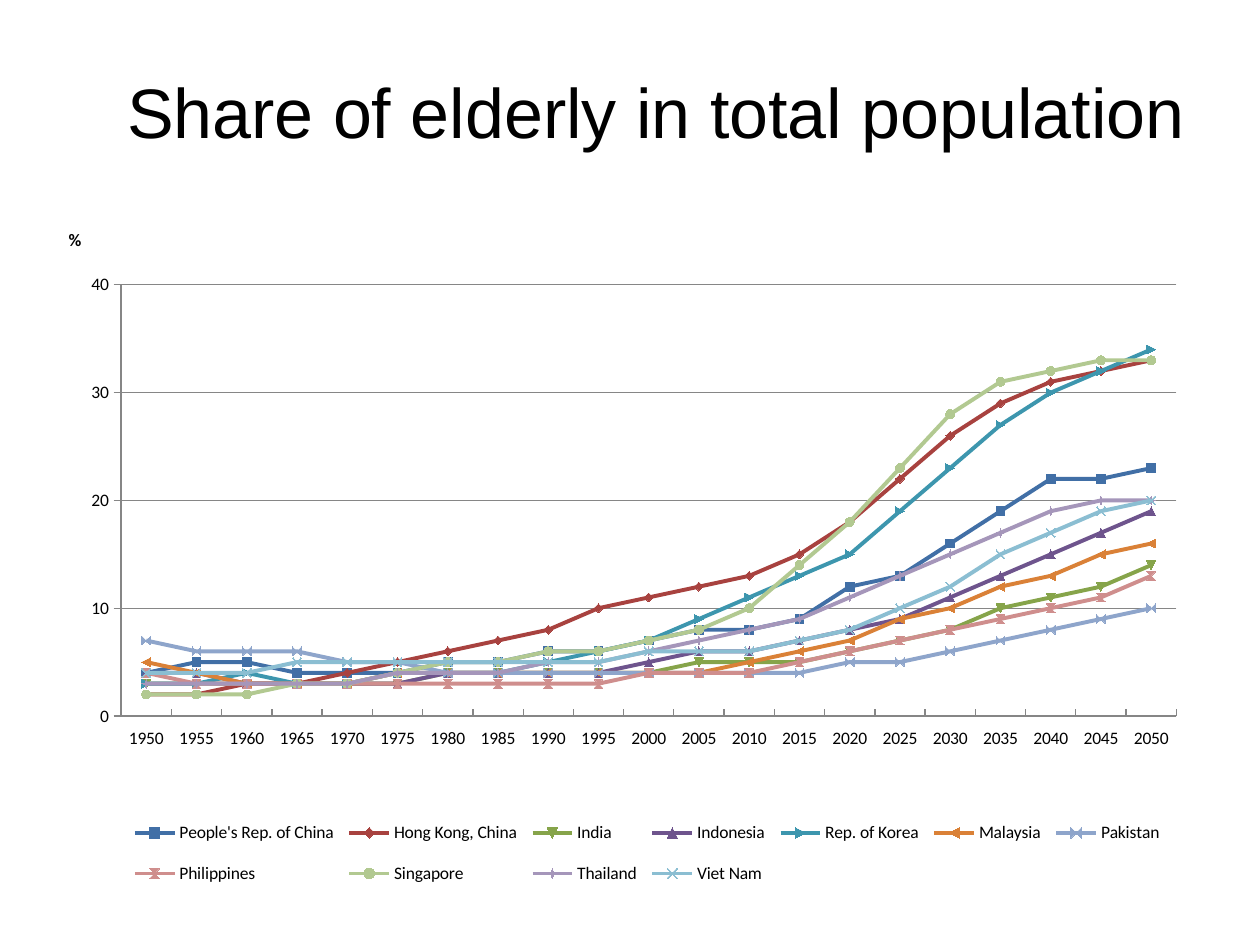
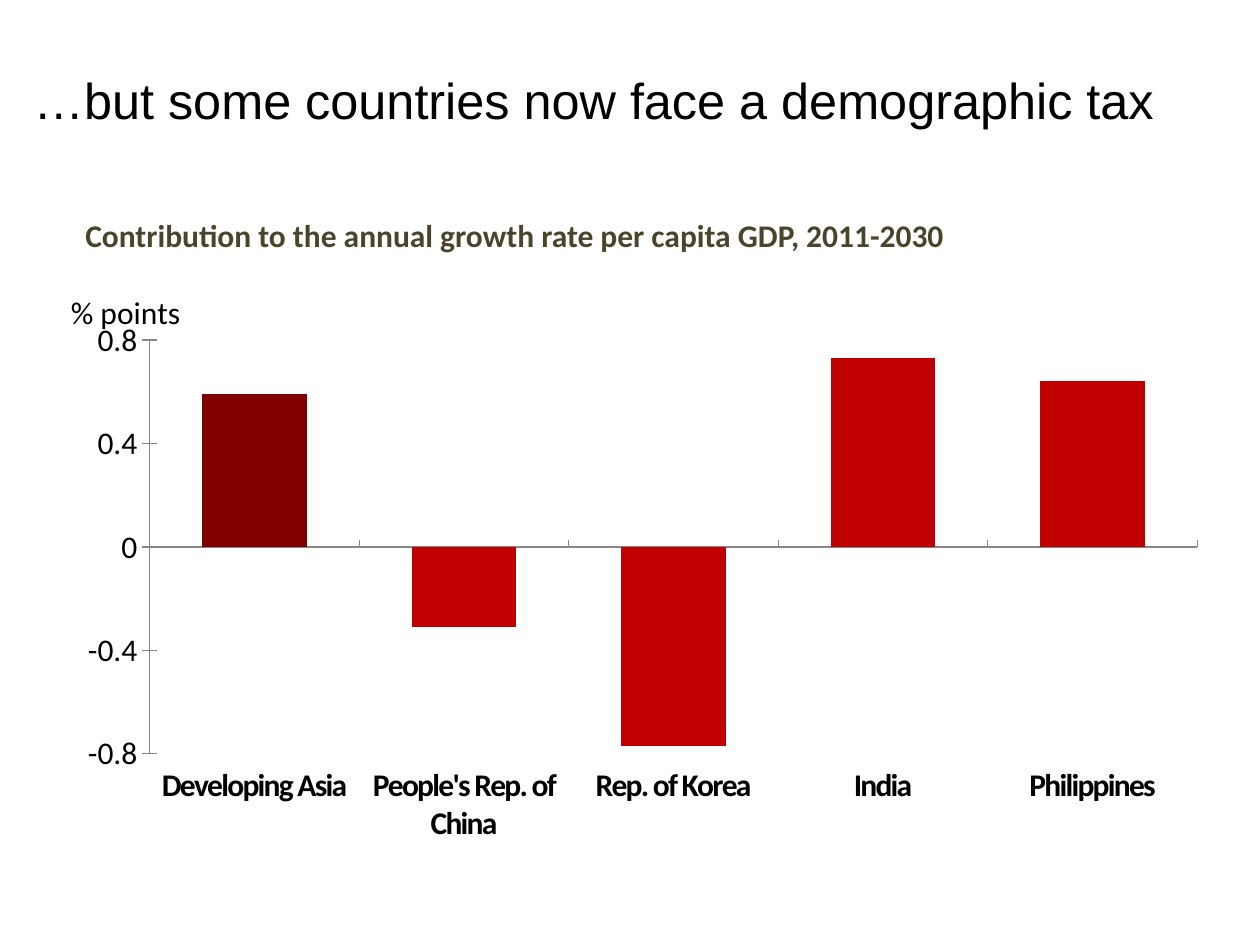
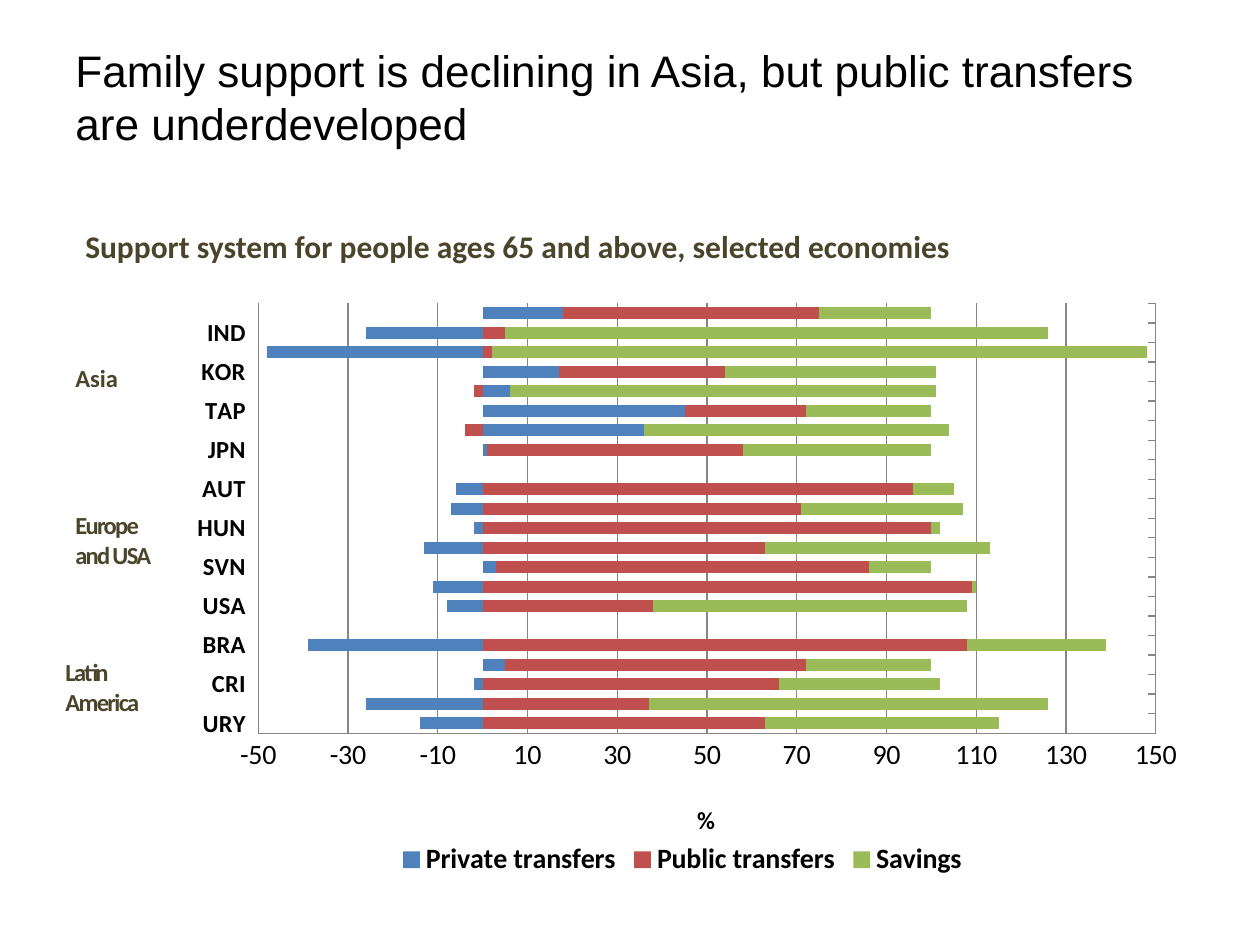
from lxml import etree
from pptx import Presentation
from pptx.chart.data import CategoryChartData
from pptx.dml.color import RGBColor
from pptx.enum.chart import (XL_AXIS_CROSSES, XL_CHART_TYPE, XL_LEGEND_POSITION,
                             XL_TICK_LABEL_POSITION, XL_TICK_MARK)
from pptx.enum.text import MSO_ANCHOR, PP_ALIGN
from pptx.oxml.ns import qn
from pptx.util import Cm, Pt

LINE = XL_CHART_TYPE.LINE_MARKERS
COLUMN = XL_CHART_TYPE.COLUMN_CLUSTERED
STACK = XL_CHART_TYPE.BAR_STACKED
IN, OUT, CROSS = XL_TICK_MARK.INSIDE, XL_TICK_MARK.OUTSIDE, XL_TICK_MARK.CROSS
LOW = XL_TICK_LABEL_POSITION.LOW
BOTTOM = XL_LEGEND_POSITION.BOTTOM
FAR = XL_AXIS_CROSSES.MAXIMUM
MIDDLE, TOP = MSO_ANCHOR.MIDDLE, MSO_ANCHOR.TOP
LEFT, CENTER = PP_ALIGN.LEFT, PP_ALIGN.CENTER

BLACK = RGBColor(0x00, 0x00, 0x00)
OLIVE = RGBColor(0x4A, 0x45, 0x2A)
GRAY = RGBColor(0x86, 0x86, 0x86)
RED = RGBColor(0xC0, 0x00, 0x00)
MAROON = RGBColor(0x80, 0x00, 0x00)
TINTS = [RGBColor.from_string(c) for c in (
    "416FA6", "A8423F", "86A44A", "6E548D", "3D96AE", "DA8137",
    "8EA5CB", "CF8E8D", "B2C991", "A596BA", "8BBED2")]
TRIO = [RGBColor.from_string(c) for c in ("4F81BD", "C0504D", "9BBB59")]


def write(slide, box, text, size, font="Calibri", color=OLIVE, bold=True,
          align=LEFT, anchor=TOP, wrap=True, tight=False):
    frame = slide.shapes.add_textbox(*[Cm(n) for n in box]).text_frame
    frame.word_wrap = wrap
    frame.vertical_anchor = anchor
    para = frame.paragraphs[0]
    para.alignment = align
    run = para.add_run()
    run.text = text
    run.font.name, run.font.size = font, Pt(size)
    run.font.bold, run.font.color.rgb = bold, color
    if tight:
        run._r.get_or_add_rPr().set("spc", "-100")


def place(part, index, spot, inner=False):
    """Fix a chart part at fractions of the chart: x, y and maybe w, h."""
    for old in part.findall(qn("c:layout")):
        part.remove(old)
    layout = etree.Element(qn("c:layout"))
    manual = etree.SubElement(layout, qn("c:manualLayout"))
    rules = [("layoutTarget", "inner")] if inner else []
    rules += [("xMode", "edge"), ("yMode", "edge")] + list(zip("xywh", spot))
    for name, val in rules:
        etree.SubElement(manual, qn("c:" + name)).set("val", str(val))
    part.insert(index, layout)


# Data
YEARS = [str(y) for y in range(1950, 2051, 5)]
ELDERLY = {
    "People's Rep. of China":
        [4, 5, 5, 4, 4, 4, 5, 5, 6, 6, 7, 8, 8, 9, 12, 13, 16, 19, 22, 22, 23],
    "Hong Kong, China":
        [2, 2, 3, 3, 4, 5, 6, 7, 8, 10, 11, 12, 13, 15, 18, 22, 26, 29, 31, 32, 33],
    "India": [3, 3, 3, 3, 3, 3, 4, 4, 4, 4, 4, 5, 5, 5, 6, 7, 8, 10, 11, 12, 14],
    "Indonesia": [4, 4, 3, 3, 3, 3, 4, 4, 4, 4, 5, 6, 6, 7, 8, 9, 11, 13, 15, 17, 19],
    "Rep. of Korea":
        [3, 3, 4, 3, 3, 4, 4, 4, 5, 6, 7, 9, 11, 13, 15, 19, 23, 27, 30, 32, 34],
    "Malaysia": [5, 4, 3, 3, 3, 4, 4, 4, 4, 4, 4, 4, 5, 6, 7, 9, 10, 12, 13, 15, 16],
    "Pakistan": [7, 6, 6, 6, 5, 5, 4, 4, 4, 4, 4, 4, 4, 4, 5, 5, 6, 7, 8, 9, 10],
    "Philippines": [4, 3, 3, 3, 3, 3, 3, 3, 3, 3, 4, 4, 4, 5, 6, 7, 8, 9, 10, 11, 13],
    "Singapore":
        [2, 2, 2, 3, 3, 4, 5, 5, 6, 6, 7, 8, 10, 14, 18, 23, 28, 31, 32, 33, 33],
    "Thailand": [3, 3, 3, 3, 3, 4, 4, 4, 5, 5, 6, 7, 8, 9, 11, 13, 15, 17, 19, 20, 20],
    "Viet Nam": [4, 4, 4, 5, 5, 5, 5, 5, 5, 5, 6, 6, 6, 7, 8, 10, 12, 15, 17, 19, 20],
}
PLACES = ["Developing Asia", "People's Rep. of China", "Rep. of Korea",
          "India", "Philippines"]
GROWTH = {"Series 1": [0.59, -0.31, -0.77, 0.73, 0.64]}
CODES = ["URY", "MEX", "CRI", "CHL", "BRA", "", "USA", "SWE", "SVN", "SPA", "HUN",
         "GER", "AUT", "", "JPN", "THA", "TAP", "PHI", "KOR", "INO", "IND", "PRC"]
SUPPORT = {
    "Private transfers": [-14, -26, -2, 5, -39, None, -8, -11, 3, -13, -2, -7, -6,
                          None, 1, 36, 45, 6, 17, -48, -26, 18],
    "Public transfers": [63, 37, 66, 67, 108, None, 38, 109, 83, 63, 100, 71, 96,
                         None, 57, -4, 27, -2, 37, 2, 5, 57],
    "Savings": [52, 89, 36, 28, 31, None, 70, 1, 14, 50, 2, 36, 9,
                None, 42, 68, 28, 95, 47, 146, 121, 25],
}

PAGES = [
    dict(title="Share of elderly in total population", size=40, align=CENTER,
         head=(1.47, 0.64, 23.5, 3.18), kind=LINE, box=(0.84, 4.11, 23.93, 14.71),
         cats=YEARS, data=ELDERLY, tints=TINTS, font=10,
         plot=(0.067, 0.111, 0.889, 0.591), scale=(0, 40, 10), tick=OUT, grid=True,
         unit="%", unit_font=10, unit_bold=True, spot=(0.02, 0.03)),
    dict(title="…but some countries now face a demographic tax", size=28.8, align=LEFT,
         head=(0.43, 0.64, 24.56, 2.74), kind=COLUMN, box=(0.84, 4.65, 23.7, 13.54),
         cats=PLACES, data=GROWTH, tints=[RED], font=18,
         plot=(0.092, 0.163, 0.891, 0.616), scale=(-0.8, 0.8, 0.4), tick=CROSS,
         grid=False, unit="% points", unit_font=18, unit_bold=False, spot=(0.02, 0.08)),
    dict(title="Family support is declining in Asia, but public transfers "
               "are underdeveloped", size=25.2, align=LEFT,
         head=(1.27, 0.64, 23.29, 2.62), kind=STACK, box=(3.38, 5.72, 20.75, 12.07),
         cats=CODES, data=SUPPORT, tints=TRIO, font=18,
         plot=(0.088, 0.033, 0.872, 0.718), scale=(-50, 150, 20), tick=IN, grid=True,
         unit="%", unit_font=14, unit_bold=True, spot=(0.51, 0.86)),
]

deck = Presentation()
deck.slide_width, deck.slide_height = Cm(25.4), Cm(19.05)
slides, charts = [], []

# Title and chart of each slide
for page in PAGES:
    slide = deck.slides.add_slide(deck.slide_layouts[6])
    write(slide, page["head"], page["title"], page["size"], "Arial", BLACK, False,
          page["align"], MIDDLE)
    data = CategoryChartData()
    data.categories = page["cats"]
    for name, vals in page["data"].items():
        data.add_series(name, vals)
    chart = slide.shapes.add_chart(
        page["kind"], *[Cm(n) for n in page["box"]], data).chart
    chart.has_title = chart.has_legend = False
    chart.font.name, chart.font.size = "Calibri", Pt(page["font"])
    chart.font.color.rgb = BLACK
    plot = chart.plots[0]
    plot.vary_by_categories = False
    place(chart.element.xpath("//c:plotArea")[0], 0, page["plot"], True)

    # Axes
    cat, val = chart.category_axis, chart.value_axis
    val.minimum_scale, val.maximum_scale, val.major_unit = page["scale"]
    val.has_major_gridlines = page["grid"]
    if page["grid"]:
        val.major_gridlines.format.line.color.rgb = GRAY
    cat.major_tick_mark, val.major_tick_mark = IN, page["tick"]
    cat.tick_label_position = LOW
    for axis in (cat, val):
        axis.format.line.color.rgb = GRAY
        axis.tick_labels.number_format = "General"
        axis.tick_labels.number_format_is_linked = False

    # Unit beside the value axis
    run = val.axis_title.text_frame.paragraphs[0].add_run()
    run.text = page["unit"]
    run.font.size, run.font.bold = Pt(page["unit_font"]), page["unit_bold"]
    run.font.name, run.font.color.rgb = "Calibri", BLACK
    unit = chart.element.xpath("//c:valAx/c:title")[0]
    body = unit.find(".//" + qn("a:bodyPr"))
    body.set("rot", "0")
    body.set("vert", "horz")
    place(unit, 1, page["spot"])

    # Series colours
    for series, tint in zip(plot.series, page["tints"]):
        if page["kind"] == LINE:
            series.smooth = False
            series.format.line.width = Pt(2.25)
            series.format.line.color.rgb = tint
            mark = series.marker.format
            mark.fill.solid()
            mark.fill.fore_color.rgb = mark.line.color.rgb = tint
        else:
            series.invert_if_negative = False
            series.format.fill.solid()
            series.format.fill.fore_color.rgb = tint
    slides.append(slide)
    charts.append(chart)

elder, growth, support = charts

# Legends
for chart in (elder, support):
    chart.has_legend = True
    chart.legend.position = BOTTOM
    chart.legend.include_in_layout = False
place(elder.element.xpath("//c:legend")[0], 1, (0.07, 0.82, 0.88, 0.14))
support.legend.font.size, support.legend.font.bold = Pt(16), True

# Growth columns
growth.plots[0].gap_width = 100
first = growth.plots[0].series[0].points[0].format.fill
first.solid()
first.fore_color.rgb = MAROON
growth.category_axis.tick_labels.font.bold = True
growth.element.xpath("//c:catAx/c:txPr//a:defRPr")[0].set("spc", "-100")

# Support bars
support.plots[0].gap_width, support.plots[0].overlap = 62, 100
support.value_axis.crosses = FAR
support.value_axis.tick_labels.font.size = Pt(16)
codes = support.category_axis.tick_labels.font
codes.size, codes.bold = Pt(14), True

# Chart headings and region labels
write(slides[1], (1.47, 4.24, 17.98, 1.02),
      "Contribution to the annual growth rate per capita GDP, 2011-2030", 18, wrap=False)
write(slides[2], (1.47, 4.45, 18.03, 1.02),
      "Support system for people ages 65 and above, selected economies", 18, wrap=False)
for text, box, tight in (("Asia", (1.27, 7.19, 2.34, 0.86), False),
                         ("Europe and USA", (1.27, 10.16, 2.34, 1.45), True),
                         ("Latin America", (1.07, 13.13, 2.54, 1.45), True)):
    write(slides[2], box, text, 14, tight=tight)

deck.save("out.pptx")
